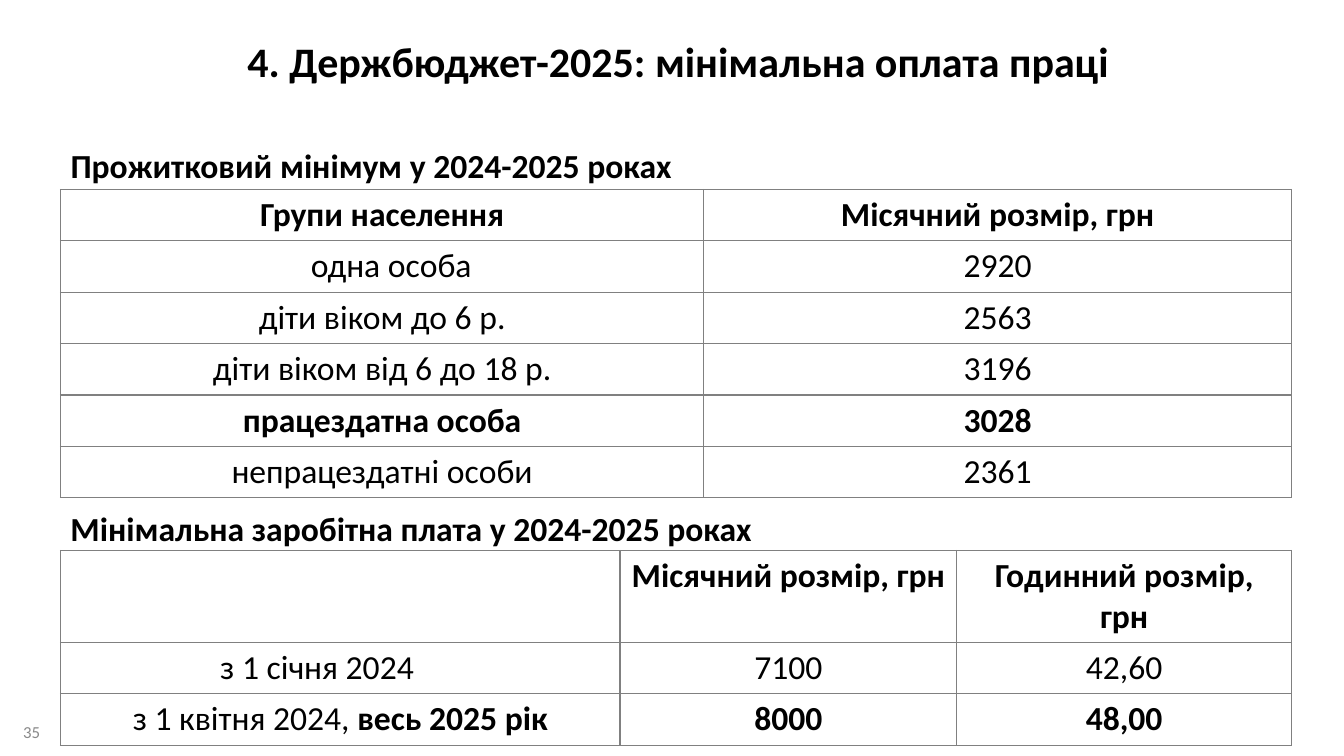
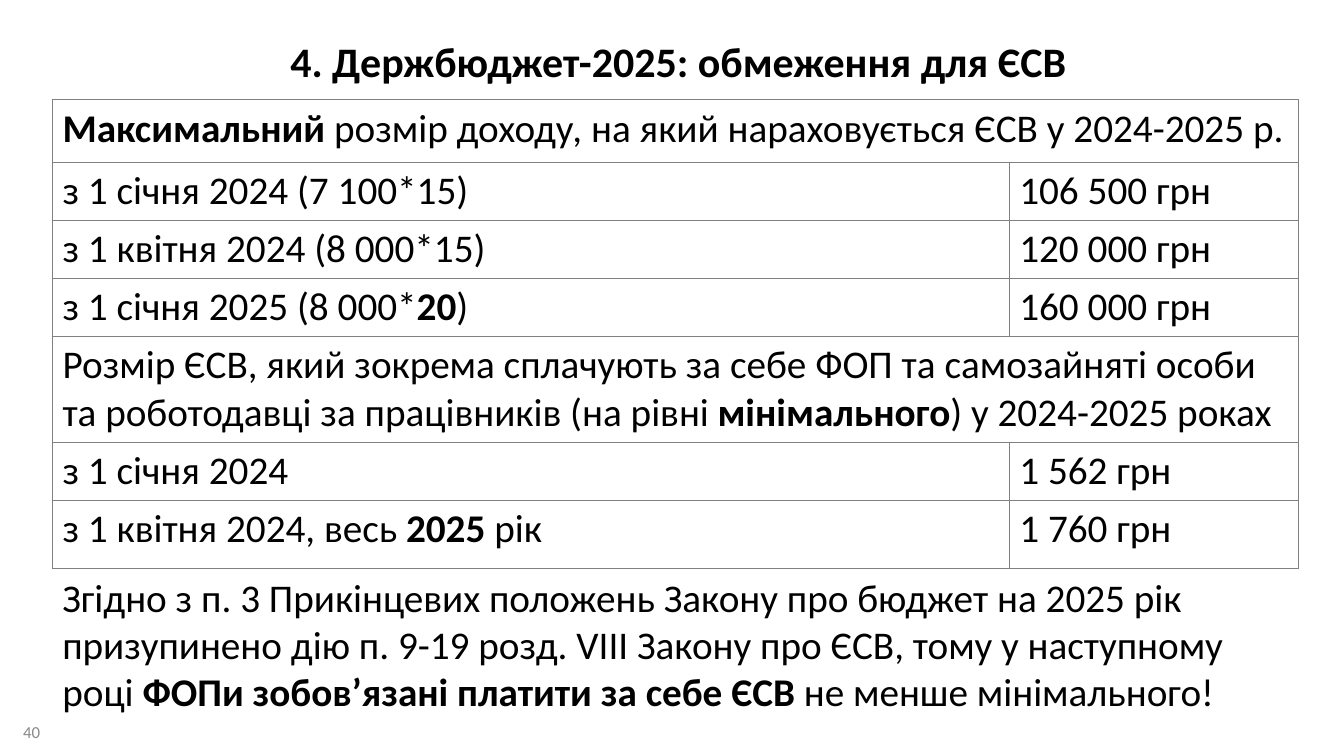
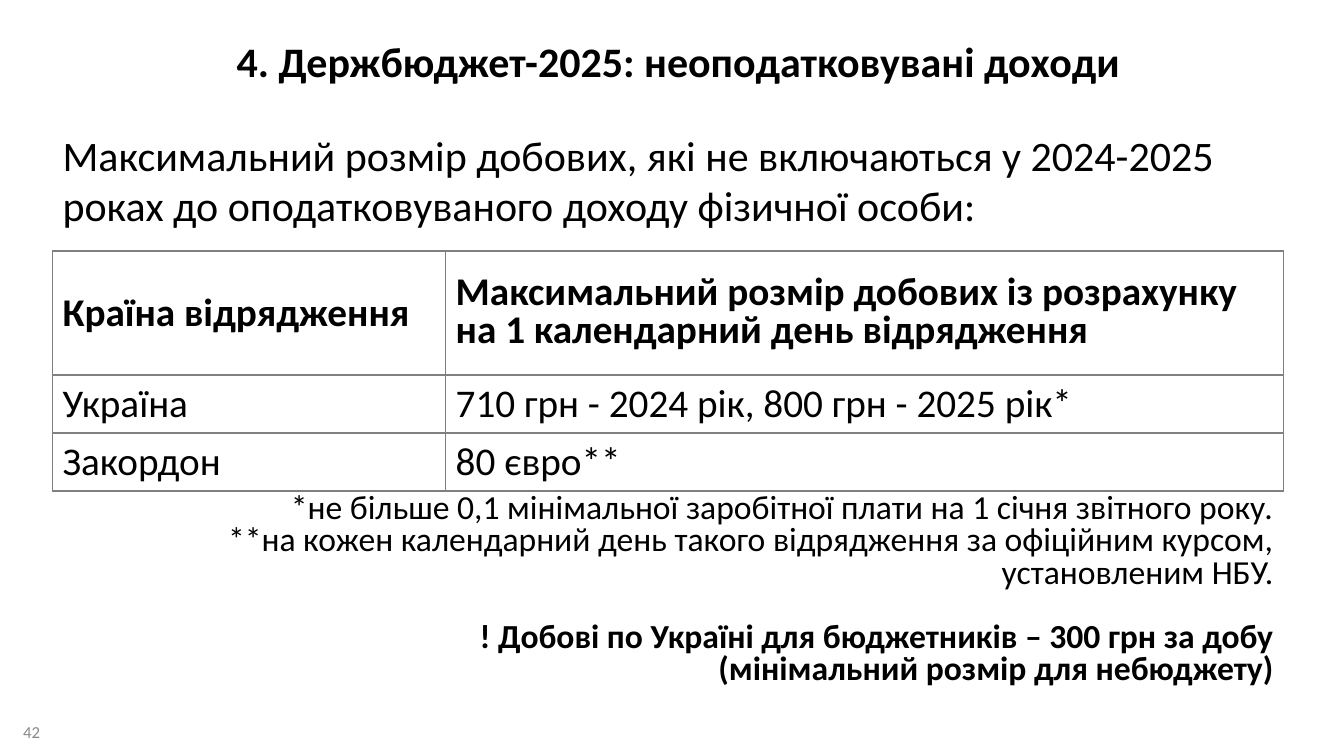
from lxml.etree import SubElement
from pptx import Presentation
from pptx.dml.color import RGBColor
from pptx.enum.text import MSO_ANCHOR as Anchor, MSO_AUTO_SIZE as AutoSize, PP_ALIGN as Align
from pptx.oxml.ns import qn
from pptx.util import Emu, Pt

# Shared look
FONT = "Calibri"
INK, GRAY, WHITE, GRID = "000000", "898989", "FFFFFF", "808080"
EMU_PER_PX = 9144  # 100 px to the inch
TITLE_LAYOUT, TITLE_ONLY_LAYOUT = 0, 5


def px(length):
    return Emu(length * EMU_PER_PX)


def color(hex_string):
    return RGBColor.from_string(hex_string)


def place(shape, left, top, width, height):
    shape.left, shape.top = px(left), px(top)
    shape.width, shape.height = px(width), px(height)


def write(para, text, size, align=Align.LEFT, spacing=1.0, ink=INK):
    """Fill a paragraph; text between vertical bars is bold."""
    para.alignment, para.line_spacing = align, spacing
    para.space_before = Pt(0)
    font = para.font
    font.name, font.size, font.color.rgb = FONT, Pt(size), color(ink)
    parts = text.split("|")
    font.bold = not parts[0] and not parts[-1] and len(parts) == 3
    for index, part in enumerate(parts):
        if part:
            span = para.add_run()
            span.text = part
            if index % 2 and not font.bold:
                span.font.bold = True


def fill_frame(shape, lines, size, anchor=Anchor.TOP, **style):
    frame = shape.text_frame
    frame.word_wrap, frame.auto_size = True, AutoSize.NONE
    frame.vertical_anchor = anchor
    for index, line in enumerate(lines):
        para = frame.add_paragraph() if index else frame.paragraphs[0]
        write(para, line, size, **style)
    return frame


def add_text(page, area, lines, size, **style):
    box = page.shapes.add_textbox(*map(px, area))
    return fill_frame(box, lines, size, **style)


def add_page(deck, layout, title, number, title_height=57):
    page = deck.slides.add_slide(deck.slide_layouts[layout])
    place(page.shapes.title, 45, 36, 1256, title_height)
    fill_frame(page.shapes.title, [f"|{title}|"], 30, align=Align.CENTER, spacing=0.9)
    add_text(page, (13, 706, 55, 39), [number], 12, anchor=Anchor.MIDDLE, ink=GRAY)
    return page


def add_subtitle(page, area, text, size):
    subtitle = page.placeholders[1]
    place(subtitle, *area)
    fill_frame(subtitle, [text], size)


def add_borders(cell):
    props = cell._tc.get_or_add_tcPr()
    for side in ("lnL", "lnR", "lnT", "lnB"):
        line = SubElement(props, qn(f"a:{side}"), w=str(Pt(1)))
        solid = SubElement(line, qn("a:solidFill"))
        SubElement(solid, qn("a:srgbClr"), val=GRID)


def add_grid(page, left, top, widths, heights, rows, size,
             align=Align.LEFT, anchor=Anchor.TOP):
    """Add a ruled table; a row with a single text spans all columns."""
    table = page.shapes.add_table(
        len(rows), len(widths), px(left), px(top),
        px(sum(widths)), px(sum(heights))).table
    table.first_row = table.horz_banding = False
    for column, width in zip(table.columns, widths):
        column.width = px(width)
    for index, (texts, height) in enumerate(zip(rows, heights)):
        table.rows[index].height = px(height)
        if len(texts) == 1:
            table.cell(index, 0).merge(table.cell(index, len(widths) - 1))
        for cell in table.rows[index].cells:
            add_borders(cell)
            cell.fill.solid()
            cell.fill.fore_color.rgb = color(WHITE)
            cell.vertical_anchor = anchor
        for position, text in enumerate(texts):
            if text:
                para = table.cell(index, position).text_frame.paragraphs[0]
                write(para, text, size, align)
    return table


def minimum_wage_page(deck):
    page = add_page(deck, TITLE_LAYOUT, "4. Держбюджет-2025: мінімальна оплата праці",
                    "35", title_height=94)
    add_subtitle(page, (60, 139, 1221, 49), "|Прожитковий мінімум у 2024-2025 роках|", 24)
    living = add_grid(page, 60, 188, (638, 583), [51] * 6, [
        ("|Групи населення|", "|Місячний розмір, грн|"),
        ("одна особа", "2920"),
        ("діти віком до 6 р.", "2563"),
        ("діти віком від 6 до 18 р.", "3196"),
        ("|працездатна особа|", "|3028|"),
        ("непрацездатні особи", "2361"),
    ], 24, Align.CENTER)
    living.cell(1, 0).margin_left = px(28)
    add_text(page, (60, 499, 1221, 50),
             ["|Мінімальна заробітна плата у 2024-2025 роках|"], 24)
    wage = add_grid(page, 60, 546, (555, 334, 332), [51] * 3, [
        ("", "|Місячний розмір, грн|", "|Годинний розмір, грн|"),
        ("з 1 січня 2024", "7100", "42,60"),
        ("з 1 квітня 2024,| весь 2025 рік|", "|8000|", "|48,00|"),
    ], 24, Align.CENTER)
    wage.cell(1, 0).margin_right = px(56)


def contribution_page(deck):
    page = add_page(deck, TITLE_ONLY_LAYOUT, "4. Держбюджет-2025: обмеження для ЄСВ", "40")
    add_grid(page, 52, 99, (949, 287), (62, 57, 57, 57, 103, 57, 68), [
        ("|Максимальний |розмір доходу, на який нараховується ЄСВ у 2024-2025 р.",),
        ("з 1 січня 2024 (7 100*15)", "106 500 грн"),
        ("з 1 квітня 2024 (8 000*15)", "120 000 грн"),
        ("з 1 січня 2025 (8 000*|20|)", "160 000 грн"),
        ("Розмір ЄСВ, який зокрема сплачують за себе ФОП та самозайняті особи "
         "та роботодавці за працівників (на рівні |мінімального|) у 2024-2025 роках",),
        ("з 1 січня 2024", "1 562 грн"),
        ("з 1 квітня 2024, весь |2025 |рік", "1 760 грн"),
    ], 28)
    add_text(page, (52, 564, 1237, 145), [
        "Згідно з п. 3 Прикінцевих положень Закону про бюджет на 2025 рік "
        "призупинено дію п. 9-19 розд. VIII Закону про ЄСВ, тому у наступному році "
        "|ФОПи зобов’язані платити за себе ЄСВ |не менше мінімального!"], 28)


def daily_allowance_page(deck):
    page = add_page(deck, TITLE_LAYOUT, "4. Держбюджет-2025: неоподатковувані доходи", "42")
    add_subtitle(page, (52, 123, 1221, 94),
                 "Максимальний розмір добових, які не включаються у 2024-2025 роках "
                 "до оподатковуваного доходу фізичної особи:", 30)
    allowance = add_grid(page, 52, 249, (390, 831), (123, 57, 57), [
        ("|Країна відрядження|",
         "|Максимальний розмір добових із розрахунку на 1 календарний день відрядження|"),
        ("Україна", "710 грн - 2024 рік, 800 грн - 2025 рік*"),
        ("Закордон", "80 євро**"),
    ], 28, anchor=Anchor.MIDDLE)
    allowance.cell(0, 1).text_frame.paragraphs[0].line_spacing = 0.8
    notes = add_text(page, (52, 485, 1221, 223), [
        "*не більше 0,1 мінімальної заробітної плати на 1 січня звітного року.",
        "**на кожен календарний день такого відрядження за офіційним курсом, "
        "установленим НБУ.",
        "|! Добові по Україні для бюджетників – 300 грн за добу|",
        "|(мінімальний розмір для небюджету)|",
    ], 24, align=Align.RIGHT, spacing=0.8)
    notes.paragraphs[2].space_before = Pt(23)


def main():
    deck = Presentation()
    deck.slide_width, deck.slide_height = px(1333), px(750)
    minimum_wage_page(deck)
    contribution_page(deck)
    daily_allowance_page(deck)
    deck.save("out.pptx")


if __name__ == "__main__":
    main()
